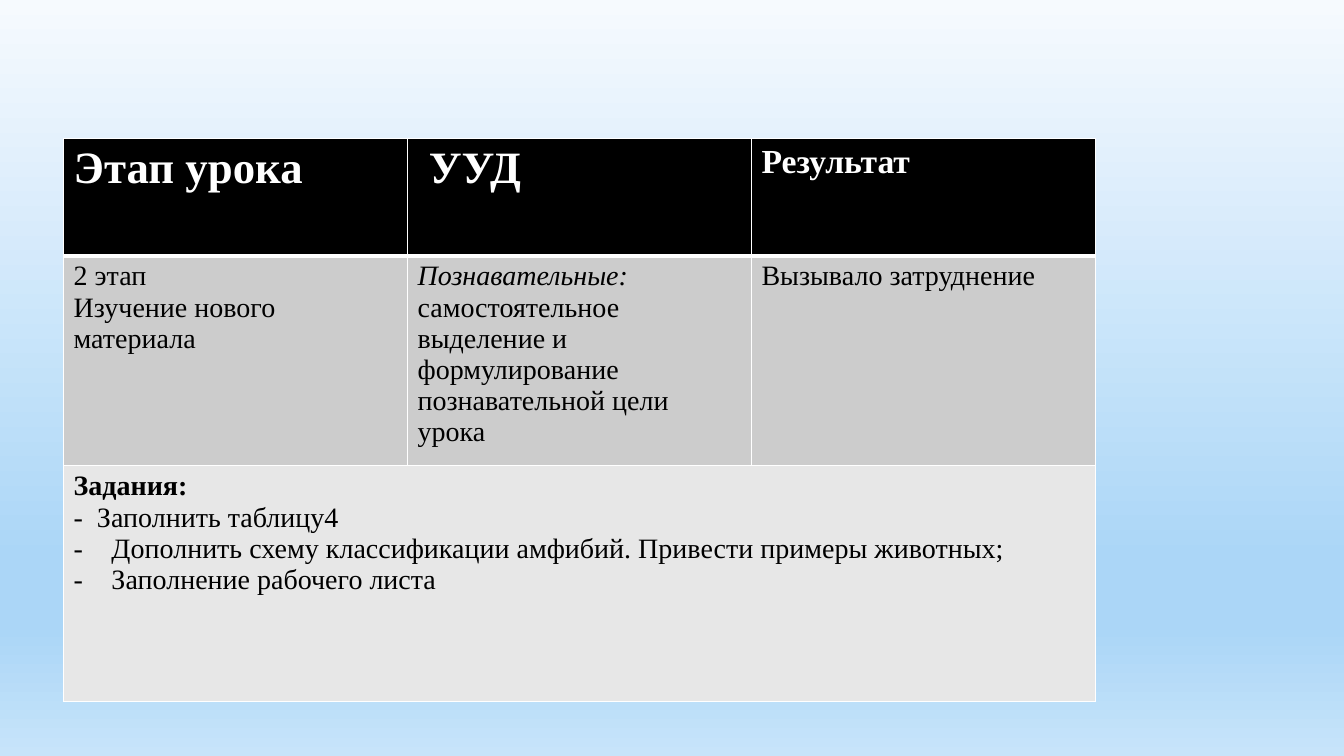
from lxml import etree
from pptx import Presentation
from pptx import util as u
from pptx.dml import color
from pptx.oxml import ns

WHITE, BLACK = "FFFFFF", "000000"
HEADER_FILL, STAGE_FILL, TASKS_FILL = BLACK, "CCCCCC", "E7E7E7"
SKY = [(0, "F6FAFE"), (74, "ABD6F7"), (83, "ABD6F7"), (100, "C7E4FA")]


def rgb(value):
    return color.RGBColor.from_string(value)


class LessonSlide:
    font = "Times New Roman"
    body_size = 20
    dash_indent = u.Pt(27)

    def __init__(self, deck):
        self.slide = deck.slides.add_slide(deck.slide_layouts[6])

    def background(self, stops):
        fill = self.slide.background.fill
        fill.gradient()
        fill.gradient_angle = 270
        stop_list = self.slide.background._cSld.find(".//" + ns.qn("a:gsLst"))
        for old_stop in list(stop_list):
            stop_list.remove(old_stop)
        for percent, value in stops:
            stop = etree.SubElement(stop_list, ns.qn("a:gs"), pos=str(percent * 1000))
            etree.SubElement(stop, ns.qn("a:srgbClr"), val=value)

    def table(self, left, top, column_width, column_count, row_heights):
        frame = self.slide.shapes.add_table(
            len(row_heights), column_count, u.Pt(left), u.Pt(top),
            u.Pt(column_width * column_count), u.Pt(sum(row_heights)))
        table = frame.table
        table.horz_banding = False
        for column in table.columns:
            column.width = u.Pt(column_width)
        for row, height in zip(table.rows, row_heights):
            row.height = u.Pt(height)
        return table

    def cell(self, cell, fill, top_line=1, bottom_line=1):
        cell.fill.solid()
        cell.fill.fore_color.rgb = rgb(fill)
        properties = cell._tc.get_or_add_tcPr()
        widths = {"a:lnL": 1, "a:lnR": 1, "a:lnT": top_line, "a:lnB": bottom_line}
        for index, (side, width) in enumerate(widths.items()):
            line = etree.Element(ns.qn(side), w=str(u.Pt(width)))
            paint = etree.SubElement(line, ns.qn("a:solidFill"))
            etree.SubElement(paint, ns.qn("a:srgbClr"), val=WHITE)
            properties.insert(index, line)

    def cell_text(self, cell, lines, size=body_size, ink=BLACK, bold_first=False):
        cell.text_frame.text = "\n".join(lines)
        for index, paragraph in enumerate(cell.text_frame.paragraphs):
            for run in paragraph.runs:
                self.style(run, size, ink, bold_first and index == 0)

    def style(self, run, size, ink, bold=False, italic=False):
        run.font.name = self.font
        run.font.size = u.Pt(size)
        run.font.bold = bold
        run.font.italic = italic
        run.font.color.rgb = rgb(ink)

    def dash(self, paragraph):
        properties = paragraph._p.get_or_add_pPr()
        properties.set("marL", str(self.dash_indent))
        properties.set("indent", str(-self.dash_indent))
        etree.SubElement(properties, ns.qn("a:buFont"), typeface=self.font)
        etree.SubElement(properties, ns.qn("a:buChar"), char="-")


def main():
    deck = Presentation()
    deck.slide_width, deck.slide_height = u.Pt(960), u.Pt(540)
    lesson = LessonSlide(deck)
    lesson.background(SKY)

    # Table grid, with a thick line under the header
    stages = lesson.table(45.4, 98.8, 245.7, 3, [84, 150, 168.5])
    stages.cell(2, 0).merge(stages.cell(2, 2))
    row_styles = [(HEADER_FILL, 1, 3), (STAGE_FILL, 3, 1), (TASKS_FILL, 1, 1)]
    for row, row_style in zip(stages.rows, row_styles):
        for cell in row.cells:
            lesson.cell(cell, *row_style)

    # Header
    headings = [("Этап урока", 32), (" УУД", 32), ("Результат", 24)]
    for column, (heading, size) in enumerate(headings):
        lesson.cell_text(stages.cell(0, column), [heading], size, WHITE, bold_first=True)

    # Lesson stage
    lesson.cell_text(stages.cell(1, 0), ["2 этап", "Изучение нового материала"])
    skills = stages.cell(1, 1)
    lesson.cell_text(skills, ["Познавательные: "])
    skill_line = skills.text_frame.paragraphs[0]
    skill_line.runs[0].font.italic = True
    goal = skill_line.add_run()
    goal.text = "самостоятельное выделение и формулирование познавательной цели урока"
    lesson.style(goal, lesson.body_size, BLACK)
    lesson.cell_text(stages.cell(1, 2), ["Вызывало затруднение"])

    # Tasks
    tasks = stages.cell(2, 0)
    lesson.cell_text(tasks, [
        "Задания:",
        "-  Заполнить таблицу4",
        "Дополнить схему классификации амфибий. Привести примеры животных;",
        "Заполнение рабочего листа",
    ], bold_first=True)
    for task in tasks.text_frame.paragraphs[2:]:
        lesson.dash(task)

    deck.save("out.pptx")


if __name__ == "__main__":
    main()
